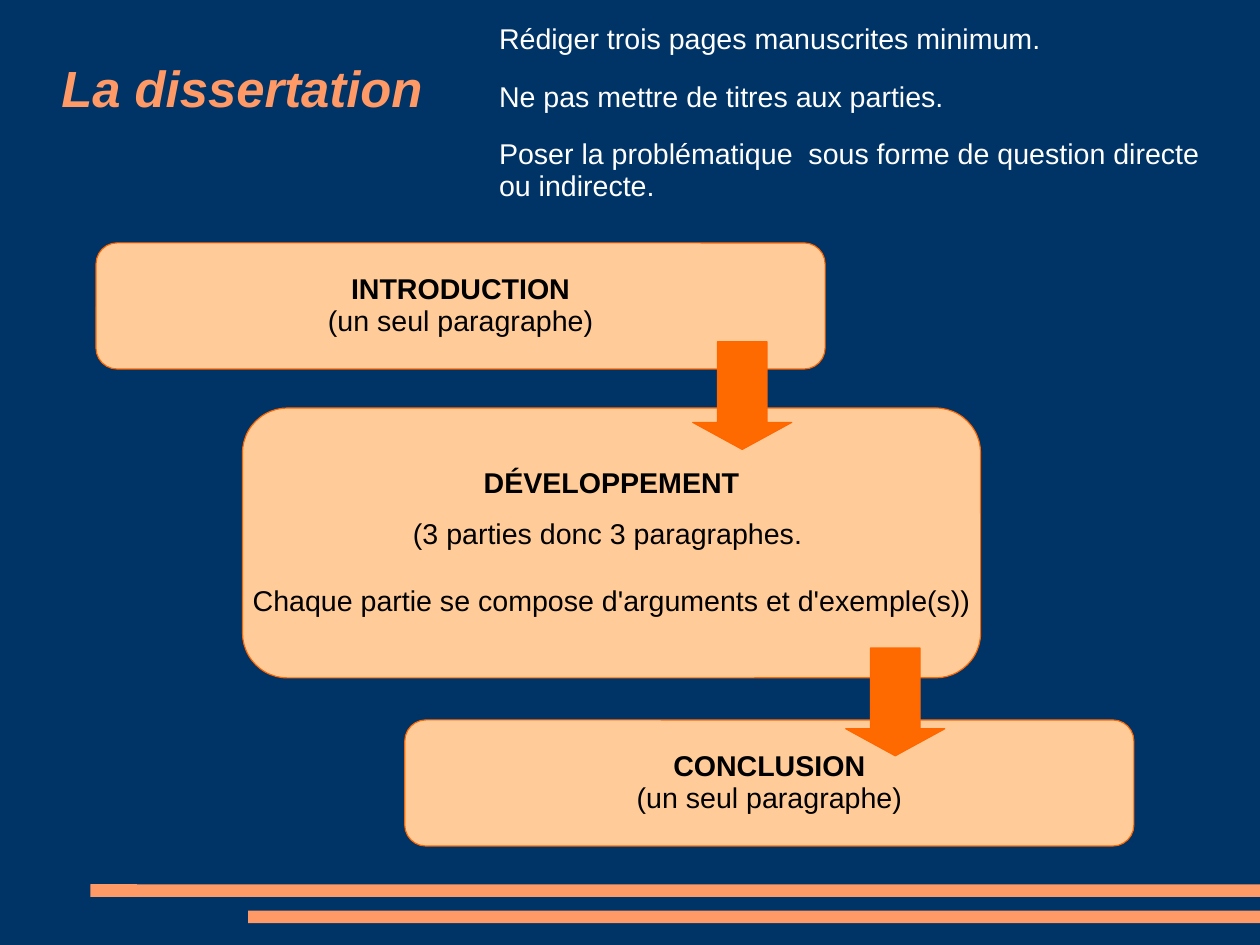
from pptx import Presentation
from pptx.dml.color import RGBColor
from pptx.enum.shapes import MSO_SHAPE as Shape
from pptx.enum.text import MSO_ANCHOR as Anchor, PP_ALIGN as Align
from pptx.util import Pt

NAVY = RGBColor(0x00, 0x33, 0x66)
SALMON = RGBColor(0xFF, 0x99, 0x66)
PEACH = RGBColor(0xFF, 0xCC, 0x99)
ORANGE = RGBColor(0xFF, 0x66, 0x00)
ARROW_ORANGE = RGBColor(0xFF, 0x6A, 0x00)
WHITE = RGBColor(0xFF, 0xFF, 0xFF)
BLACK = RGBColor(0x00, 0x00, 0x00)

SLIDE_WIDTH, SLIDE_HEIGHT = 793.75, 595.25
FOOTER_BARS = [(57, 557), (156.4, 573.6)]
ADVICE = [
    "Rédiger trois pages manuscrites minimum.",
    "Ne pas mettre de titres aux parties.",
    "Poser la problématique  sous forme de question directe ou indirecte.",
]
DEVELOPMENT = [
    "(3 parties donc 3 paragraphes. ",
    "Chaque partie se compose d'arguments et d'exemple(s))",
]
SINGLE_PARAGRAPH = ["(un seul paragraphe)"]
# heading, details, (left, top, width, height), space before and after details
STEPS = [
    ("INTRODUCTION", SINGLE_PARAGRAPH, (60.5, 153, 459.3, 79.4), (0, 0)),
    ("CONCLUSION", SINGLE_PARAGRAPH, (255, 453.5, 459.3, 79.4), (0, 0)),
    ("DÉVELOPPEMENT", DEVELOPMENT, (152.8, 257, 465, 170), (12, 10)),
]
ARROWS = [(436.4, 215.2), (532.8, 408.2)]


def add_paragraph(frame, text, size=18, color=BLACK, bold=False, italic=False,
                  align=Align.LEFT, spacing=(0, 0)):
    """Write into the frame's first paragraph while empty, else append one."""
    first = frame.paragraphs[0]
    paragraph = frame.add_paragraph() if first.runs else first
    paragraph.alignment = align
    paragraph.line_spacing = 0.93
    paragraph.space_before, paragraph.space_after = map(Pt, spacing)
    run = paragraph.add_run()
    run.text = text
    font = run.font
    font.name, font.size = "Arial", Pt(size)
    font.bold, font.italic = bold, italic
    font.color.rgb = color


def add_text_box(slide, box):
    frame = slide.shapes.add_textbox(*map(Pt, box)).text_frame
    frame.word_wrap = True
    frame.vertical_anchor = Anchor.MIDDLE
    frame.margin_left = frame.margin_right = frame.margin_bottom = 0
    frame.margin_top = Pt(1.4)
    return frame


def add_filled_shape(slide, kind, box, fill, adjustments, line=None):
    shape = slide.shapes.add_shape(kind, *map(Pt, box))
    shape.shadow.inherit = False
    for index, value in enumerate(adjustments):
        shape.adjustments[index] = value
    shape.fill.solid()
    shape.fill.fore_color.rgb = fill
    if line is None:
        shape.line.fill.background()
    else:
        shape.line.color.rgb = line
        shape.line.width = Pt(0.75)
    return shape


def add_step(slide, heading, details, box, spacing):
    shape = add_filled_shape(slide, Shape.ROUNDED_RECTANGLE, box, PEACH,
                             [0.167], ORANGE)
    frame = shape.text_frame
    frame.word_wrap = False
    frame.vertical_anchor = Anchor.MIDDLE
    add_paragraph(frame, heading, bold=True, align=Align.CENTER)
    for detail in details:
        add_paragraph(frame, detail, align=Align.CENTER, spacing=spacing)


def main():
    presentation = Presentation()
    presentation.slide_width = Pt(SLIDE_WIDTH)
    presentation.slide_height = Pt(SLIDE_HEIGHT)
    slide = presentation.slides.add_slide(presentation.slide_layouts[6])
    slide.background.fill.solid()
    slide.background.fill.fore_color.rgb = NAVY

    for left, top in FOOTER_BARS:
        add_filled_shape(slide, Shape.ROUNDED_RECTANGLE,
                         (left, top, SLIDE_WIDTH - left, 7.9), SALMON, [0.017])

    title = add_text_box(slide, (38.7, 25.2, 238.3, 61.9))
    add_paragraph(title, "La dissertation", size=32, color=SALMON, bold=True,
                  italic=True, spacing=(12, 10))
    advice = add_text_box(slide, (314.4, 0, 453.6, 141.8))
    for sentence in ADVICE:
        add_paragraph(advice, sentence, color=WHITE, spacing=(9.1, 7.1))

    for step in STEPS:
        add_step(slide, *step)
    for left, top in ARROWS:
        add_filled_shape(slide, Shape.DOWN_ARROW, (left, top, 62.4, 67.9),
                         ARROW_ORANGE, [0.5, 0.273], ORANGE)

    presentation.save("out.pptx")


if __name__ == "__main__":
    main()
